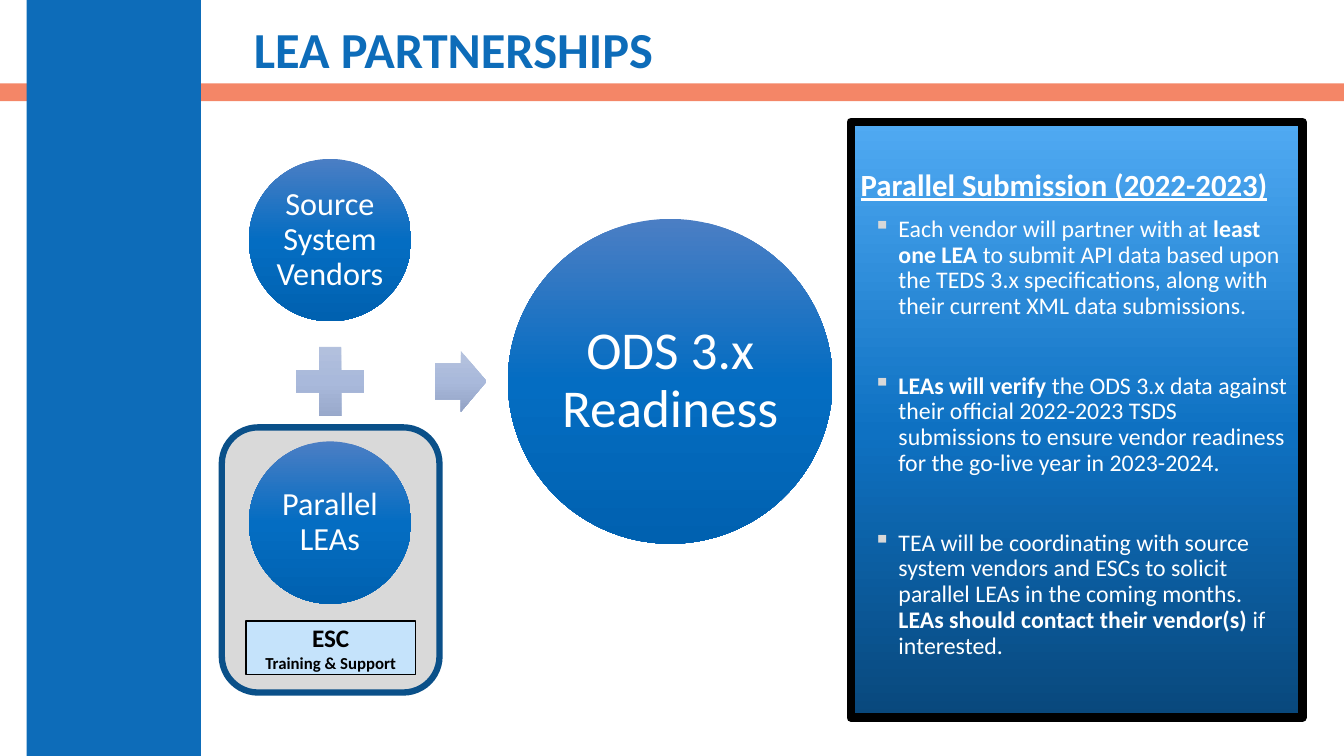
from copy import deepcopy
from dataclasses import dataclass

from pptx import Presentation
from pptx.dml.color import RGBColor
from pptx.enum.shapes import MSO_SHAPE
from pptx.enum.text import MSO_ANCHOR, PP_ALIGN
from pptx.oxml import parse_xml
from pptx.oxml.ns import nsdecls, qn
from pptx.util import Pt

RECTANGLE = MSO_SHAPE.RECTANGLE
ROUNDED = MSO_SHAPE.ROUNDED_RECTANGLE
OVAL = MSO_SHAPE.OVAL
PLUS = MSO_SHAPE.MATH_PLUS
ARROW = MSO_SHAPE.RIGHT_ARROW
LEFT, CENTER = PP_ALIGN.LEFT, PP_ALIGN.CENTER
TOP, MIDDLE = MSO_ANCHOR.TOP, MSO_ANCHOR.MIDDLE


@dataclass(frozen=True)
class Theme:
    font: str = "Calibri"
    blue: str = "0D6CB9"
    salmon: str = "F16038"
    gray: str = "D9D9D9"
    frame: str = "0A5089"
    pale_blue: str = "C5E3FB"
    bullet: str = "D8D8D8"
    white: str = "FFFFFF"
    black: str = "000000"
    panel: tuple = ((0, "09487C"), (0.48, "0E71C2"), (1, "50AAF3"))
    circle: tuple = ((0, "4B7EC4"), (0.5, "046DC2"), (1, "0061B0"))
    operator: tuple = ((0, "B6C3DE"), (0.5, "A9B9DB"), (1, "93A3C5"))
    title_size: float = 36
    result_size: float = 38
    input_size: float = 23
    heading_size: float = 22
    body_size: float = 17
    support_size: float = 18
    caption_size: float = 12


def write_text(paragraph, text, *, font, size, color, bold=False, underline=False,
               align=LEFT, spacing=0.9, before=0):
    paragraph.alignment = align
    paragraph.line_spacing = spacing
    paragraph.space_before = Pt(before)
    run = paragraph.add_run()
    run.text = text
    run.font.name = font
    run.font.size = Pt(size)
    run.font.bold = bold
    run.font.underline = underline
    run.font.color.rgb = RGBColor.from_string(color)


class SlideBuilder:
    def __init__(self, slide, theme):
        self.slide = slide
        self.theme = theme

    def shape(self, kind, left, top, width, height, fill, line=None, line_width=1):
        shape = self.slide.shapes.add_shape(kind, Pt(left), Pt(top), Pt(width), Pt(height))
        shape.shadow.inherit = False
        if isinstance(fill, tuple):
            self.gradient(shape, fill)
        else:
            shape.fill.solid()
            shape.fill.fore_color.rgb = RGBColor.from_string(fill)
        if line:
            shape.line.color.rgb = RGBColor.from_string(line)
            shape.line.width = Pt(line_width)
        else:
            shape.line.fill.background()
        return shape

    def centered(self, kind, center_x, center_y, width, height, fill, **line):
        return self.shape(kind, center_x - width / 2, center_y - height / 2,
                          width, height, fill, **line)

    def gradient(self, shape, stops, angle=270):
        shape.fill.gradient()
        stop_list = shape._element.spPr.find(".//" + qn("a:gsLst"))
        stop_list.append(deepcopy(stop_list[0]))
        for stop, (position, color) in zip(shape.fill.gradient_stops, stops):
            stop.position = position
            stop.color.rgb = RGBColor.from_string(color)
        shape.fill.gradient_angle = angle

    def transparency(self, shape, opacity):
        color = shape._element.spPr.find(".//" + qn("a:srgbClr"))
        color.append(parse_xml(f'<a:alpha {nsdecls("a")} val="{opacity * 1000}"/>'))

    def frame(self, shape, anchor, left=7.2, top=3.6, right=7.2, bottom=3.6):
        frame = shape.text_frame
        frame.word_wrap = True
        frame.vertical_anchor = anchor
        frame.margin_left, frame.margin_top = Pt(left), Pt(top)
        frame.margin_right, frame.margin_bottom = Pt(right), Pt(bottom)
        return frame

    def title(self, text, left, top, width, height):
        box = self.slide.shapes.add_textbox(Pt(left), Pt(top), Pt(width), Pt(height))
        write_text(self.frame(box, MIDDLE).paragraphs[0], text, font=self.theme.font,
                   size=self.theme.title_size, color=self.theme.blue, bold=True)

    def circle(self, text, center_x, center_y, diameter, size, inset):
        shape = self.centered(OVAL, center_x, center_y, diameter, diameter, self.theme.circle)
        frame = self.frame(shape, MIDDLE, inset, inset, inset, inset)
        write_text(frame.paragraphs[0], text, font=self.theme.font, size=size,
                   color=self.theme.white, align=CENTER)

    def support_box(self, lines, center_x, center_y, width, height):
        shape = self.centered(RECTANGLE, center_x, center_y, width, height,
                              self.theme.pale_blue, line=self.theme.black)
        frame = self.frame(shape, MIDDLE)
        for index, (text, size) in enumerate(lines):
            paragraph = frame.add_paragraph() if index else frame.paragraphs[0]
            write_text(paragraph, text, font=self.theme.font, size=size,
                       color=self.theme.black, bold=True, align=CENTER, spacing=1.0)

    def bullet(self, paragraph):
        properties = paragraph._p.get_or_add_pPr()
        properties.set("marL", str(Pt(27)))
        properties.set("indent", str(Pt(-18)))
        properties.append(parse_xml(
            f'<a:buClr {nsdecls("a")}><a:srgbClr val="{self.theme.bullet}"/></a:buClr>'))
        properties.append(parse_xml(f'<a:buChar {nsdecls("a")} char="▪"/>'))

    def panel(self, heading, items, left, top, width, height):
        theme = self.theme
        shape = self.shape(RECTANGLE, left, top, width, height, theme.panel,
                           line=theme.black, line_width=6)
        shape.fill.gradient_angle = 90
        frame = self.frame(shape, TOP, top=34)
        write_text(frame.paragraphs[0], heading, font=theme.font, size=theme.heading_size,
                   color=theme.white, bold=True, underline=True)
        for index, runs in enumerate(items):
            paragraph = frame.add_paragraph()
            self.bullet(paragraph)
            for text, bold in runs:
                write_text(paragraph, text, font=theme.font, size=theme.body_size,
                           color=theme.white, bold=bold, before=38.6 if index else 10)


def main():
    theme = Theme()
    presentation = Presentation()
    presentation.slide_width, presentation.slide_height = Pt(960), Pt(540)
    slide = presentation.slides.add_slide(presentation.slide_layouts[6])
    builder = SlideBuilder(slide, theme)

    bar = builder.shape(RECTANGLE, 0, 59.5, 960, 12.8, theme.salmon)
    builder.transparency(bar, 76)
    builder.shape(RECTANGLE, 19, 0, 124.5, 540, theme.blue)
    builder.title("LEA PARTNERSHIPS", 174.2, 15.8, 749.5, 42.5)

    input_x, middle_y, input_offset = 235.8, 272.4, 100.9
    builder.centered(ROUNDED, input_x + 0.4, 400, 155.5, 189.4, theme.gray,
                     line=theme.frame, line_width=4.5)
    builder.panel("Parallel Submission (2022-2023)", [
        [("Each vendor will partner with at ", False), ("least one LEA ", True),
         ("to submit API data based upon the TEDS 3.x specifications, along with "
          "their current XML data submissions.", False)],
        [("LEAs will verify ", True),
         ("the ODS 3.x data against their official 2022-2023 TSDS submissions to "
          "ensure vendor readiness for the go-live year in 2023-2024.", False)],
        [("TEA will be coordinating with source system vendors and ESCs to solicit "
          "parallel LEAs in the coming months. ", False),
         ("LEAs should contact their vendor(s)", True), (" if interested.", False)],
    ], 607.7, 87.1, 322.6, 425.5)

    for text, side in (("Source System Vendors", -1), ("Parallel LEAs", 1)):
        builder.circle(text, input_x, middle_y + side * input_offset, 116,
                       theme.input_size, 2)
    builder.centered(PLUS, input_x, middle_y, 67, 67, theme.operator)
    arrow = builder.centered(ARROW, 329.3, middle_y, 36.8, 43.2, theme.operator)
    arrow.adjustments[0] = 0.6
    builder.circle("ODS 3.x Readiness", 478.8, middle_y, 232, theme.result_size, 3.5)
    builder.support_box([("ESC", theme.support_size),
                         ("Training & Support", theme.caption_size)],
                        input_x + 0.4, 462.7, 121, 38.2)

    presentation.save("out.pptx")


if __name__ == "__main__":
    main()
